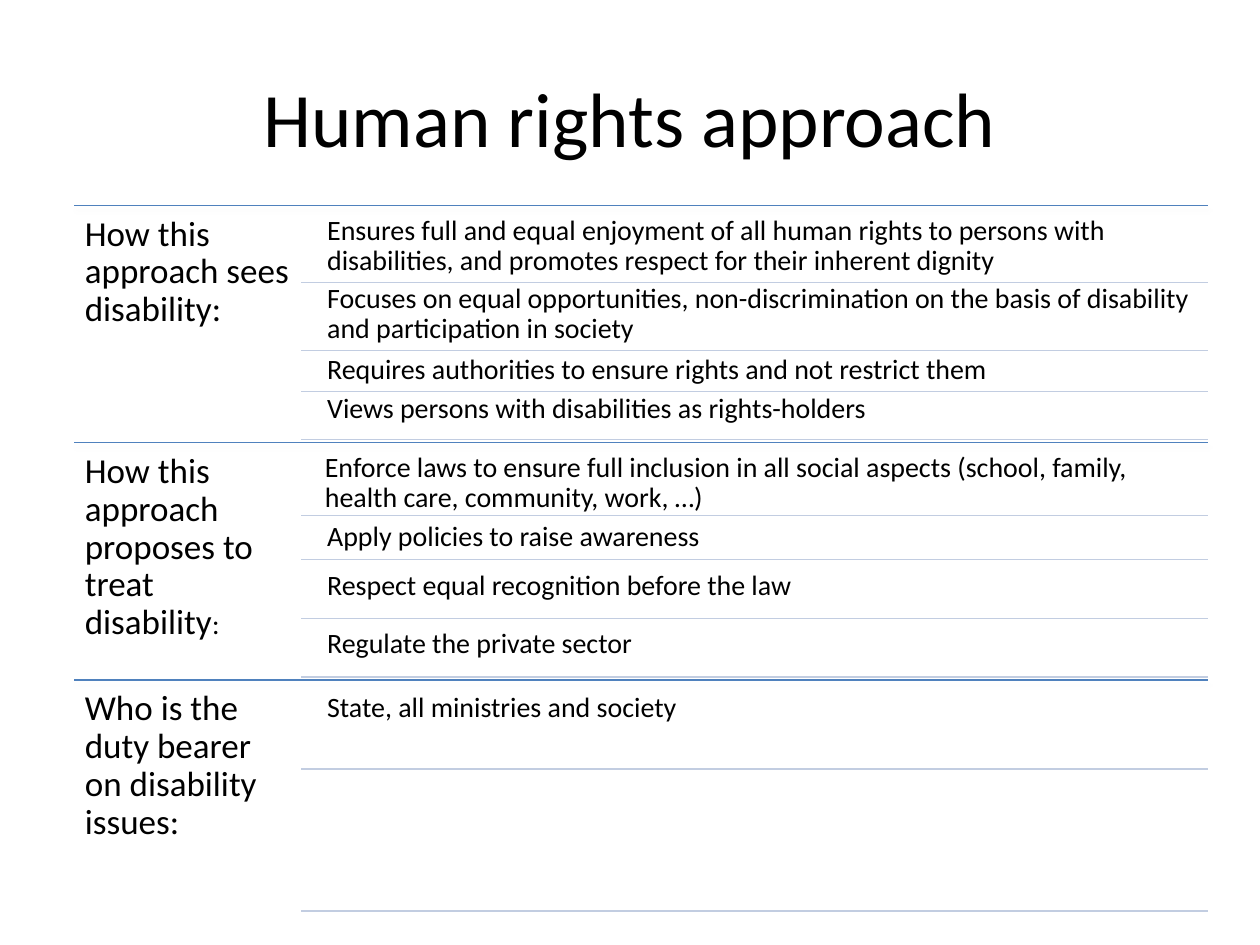
from dataclasses import dataclass

from lxml.etree import SubElement
from pptx import Presentation
from pptx.dml.color import RGBColor
from pptx.enum.shapes import MSO_CONNECTOR as Connector
from pptx.enum.text import MSO_ANCHOR as Anchor, PP_ALIGN as Align
from pptx.oxml.ns import qn
from pptx.util import Pt

COLORS = {"text": "000000", "section": "4F81BD", "entry": "C2CDE1", "shadow": "000000"}
FONT = "Calibri"

# Grid, in points
SECTION_LEFT, ENTRY_RULE_LEFT, RIGHT = 42.5, 172.1, 690.5
FIRST_TOP, SECTION_HEIGHT = 117.4, 135.6
LABEL_WIDTH = ENTRY_RULE_LEFT - SECTION_LEFT
ENTRY_LEFT, ENTRY_WIDTH = 182.2, 509


@dataclass
class Entry:
    text: str
    top: float
    height: float
    rule: float
    left: float = ENTRY_LEFT


@dataclass
class Section:
    label: str
    entries: list[Entry]
    small_ending: str = ""


SECTIONS = [
    Section("How this approach sees disability:", [
        Entry("Ensures full and equal enjoyment of all human rights to persons with "
              "disabilities, and promotes respect for their inherent dignity", 118.8, 31, 161.3),
        Entry("Focuses on equal opportunities, non-discrimination on the basis "
              "of disability and participation in society", 157.7, 41, 200.2),
        Entry("Requires authorities to ensure rights and not restrict them", 198, 25.2, 223.9),
        Entry("Views persons with disabilities as rights-holders", 220.3, 31, 251.2),
    ]),
    Section("How this approach proposes to treat disability", [
        Entry("Enforce laws to ensure full inclusion in all social aspects (school, family, "
              "health care, community, work, …)", 254.2, 31.7, 294.4, left=180.9),
        Entry("Apply policies to raise awareness", 293.8, 32.4, 319.8),
        Entry("Respect equal recognition before the law", 321.8, 31.7, 353.4),
        Entry("Regulate the private sector", 355, 31.7, 386.8),
    ], small_ending=":"),
    Section("Who is the duty bearer on disability issues:", [
        Entry("State, all ministries and society", 391.7, 53.3, 439.4),
        Entry("", 439.4, 81.2, 520.6),
    ]),
]


def style_span(span, size: float) -> None:
    span.font.name = FONT
    span.font.size = Pt(size)
    span.font.color.rgb = RGBColor.from_string(COLORS["text"])


def add_text(page, text: str, left: float, top: float, width: float, height: float,
             size: float, inset: float, spacing: float = 0.9):
    box = page.shapes.add_textbox(Pt(left), Pt(top), Pt(width), Pt(height))
    frame = box.text_frame
    frame.word_wrap = True
    frame.margin_left = frame.margin_right = Pt(inset)
    frame.margin_top = frame.margin_bottom = Pt(inset)
    para = frame.paragraphs[0]
    para.text = text
    para.line_spacing = spacing
    style_span(para.runs[0], size)
    return frame


def add_rule(page, left: float, top: float, color: str,
             shadow_distance: float, shadow_percent: int) -> None:
    rule = page.shapes.add_connector(Connector.STRAIGHT, Pt(left), Pt(top), Pt(RIGHT), Pt(top))
    rule.line.color.rgb = RGBColor.from_string(COLORS[color])
    rule.line.width = Pt(0.75)
    # Soft shadow straight below the rule
    effects = SubElement(rule._element.spPr, qn("a:effectLst"))
    shadow = SubElement(effects, qn("a:outerShdw"), blurRad=str(Pt(3.1)),
                        dist=str(Pt(shadow_distance)), dir="5400000", rotWithShape="0")
    tint = SubElement(shadow, qn("a:srgbClr"), val=COLORS["shadow"])
    SubElement(tint, qn("a:alpha"), val=str(shadow_percent * 1000))


def add_section(page, section: Section, top: float) -> None:
    add_rule(page, SECTION_LEFT, top, "section", 1.8, 35)
    label = add_text(page, section.label, SECTION_LEFT, top, LABEL_WIDTH, SECTION_HEIGHT,
                     size=20, inset=6)
    if section.small_ending:
        span = label.paragraphs[0].add_run()
        span.text = section.small_ending
        style_span(span, 16)
    for entry in section.entries:
        if entry.text:
            add_text(page, entry.text, entry.left, entry.top, ENTRY_WIDTH, entry.height,
                     size=16, inset=4.8)
        add_rule(page, ENTRY_RULE_LEFT, entry.rule, "entry", 1.6, 38)


def main() -> None:
    deck = Presentation()
    deck.slide_width, deck.slide_height = Pt(720), Pt(540)
    page = deck.slides.add_slide(deck.slide_layouts[6])

    # Title
    title = add_text(page, "Human rights approach", 36, 21.6, 648, 90,
                     size=44, inset=3.6, spacing=1.0)
    title.vertical_anchor = Anchor.MIDDLE
    title.paragraphs[0].alignment = Align.CENTER

    # Sections, stacked at an equal pitch
    for index, section in enumerate(SECTIONS):
        add_section(page, section, FIRST_TOP + index * SECTION_HEIGHT)

    deck.save("out.pptx")


if __name__ == "__main__":
    main()
